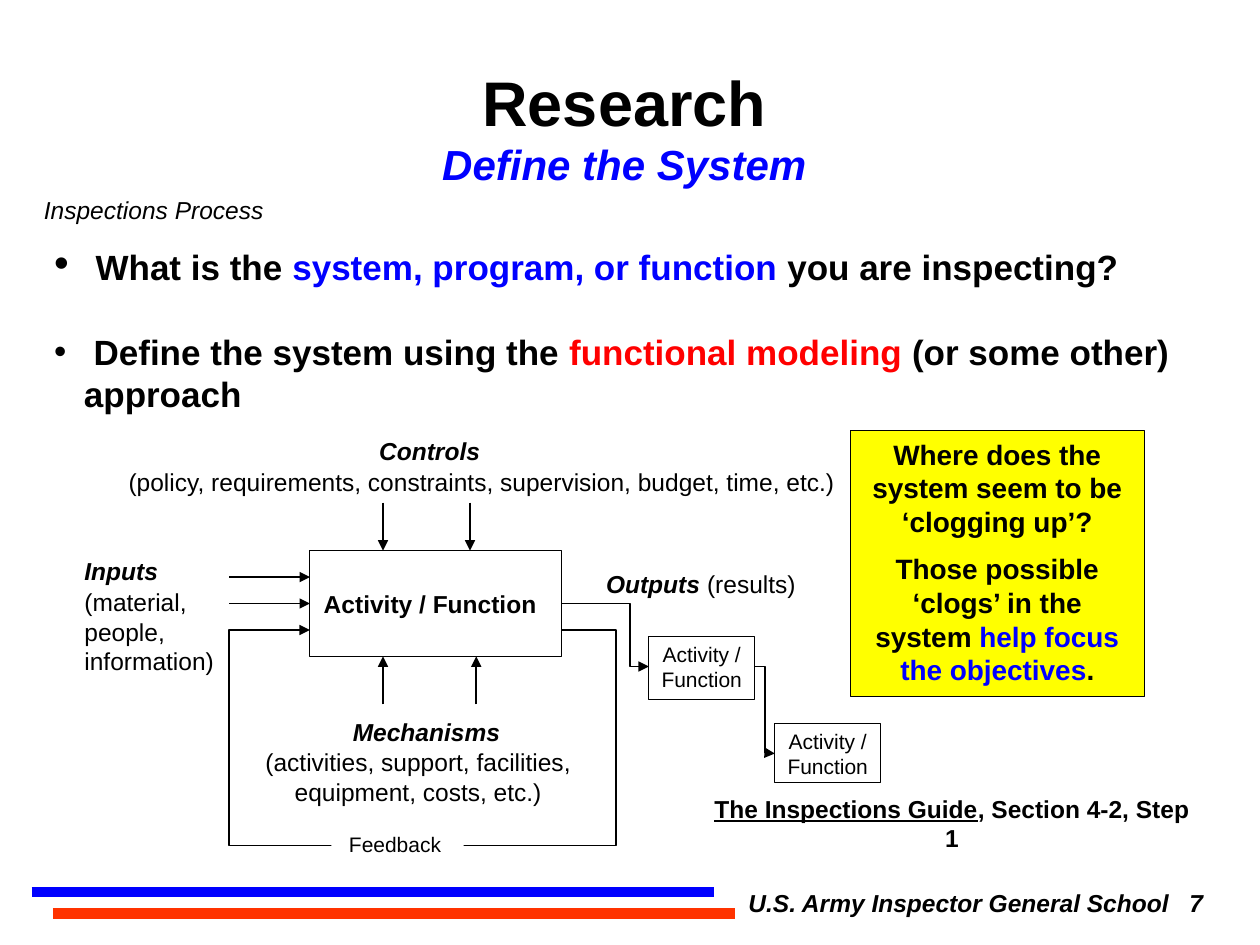
"""Builds the research slide that defines a system with a functional model."""
from lxml.etree import SubElement
from pptx import Presentation
from pptx.dml.color import RGBColor
from pptx.enum.shapes import MSO_CONNECTOR as Route, MSO_SHAPE as Preset
from pptx.enum.text import MSO_ANCHOR as Anchor, MSO_AUTO_SIZE as AutoSize, PP_ALIGN as Align
from pptx.oxml.ns import qn
from pptx.util import Inches, Pt

BLACK = RGBColor(0x00, 0x00, 0x00)
WHITE = RGBColor(0xFF, 0xFF, 0xFF)
BLUE = RGBColor(0x00, 0x00, 0xFF)
RED = RGBColor(0xFF, 0x00, 0x00)
ORANGE = RGBColor(0xFF, 0x33, 0x00)
YELLOW = RGBColor(0xFF, 0xFF, 0x00)

SLIDE_WIDTH, SLIDE_HEIGHT = Inches(10), Inches(7.5)
COLUMNS, ROWS = 100, 75
TINY_INSET = 0.4


def cells(*lengths):
    """Turn alternating columns and rows into slide lengths."""
    units = (SLIDE_WIDTH / COLUMNS, SLIDE_HEIGHT / ROWS)
    return [round(length * units[i % 2]) for i, length in enumerate(lengths)]


def write(frame, paragraphs, align=Align.LEFT, gap=0, **style):
    """Write paragraphs made of (text, style changes) pieces."""
    for index, pieces in enumerate(paragraphs):
        paragraph = frame.paragraphs[0] if index == 0 else frame.add_paragraph()
        paragraph.alignment = align
        paragraph.space_before = Pt(gap if index else 0)
        for text, changes in pieces:
            run = paragraph.add_run()
            run.text = text
            look = {"size": 14, "color": BLACK, **style, **changes}
            font = run.font
            font.name = "Arial"
            font.size = Pt(look["size"])
            font.bold = look.get("bold", False)
            font.italic = look.get("italic", False)
            font.underline = look.get("underline", False)
            font.color.rgb = look["color"]


def prepare(frame, wrap=True, inset=None, anchor=Anchor.TOP):
    """Set wrapping, anchor and an optional equal inset of a frame."""
    frame.word_wrap = wrap
    frame.auto_size = AutoSize.NONE
    frame.vertical_anchor = anchor
    if inset is not None:
        margin, = cells(inset)
        frame.margin_left = frame.margin_right = margin
        frame.margin_top = frame.margin_bottom = margin


def add_label(slide, area, pieces, wrap=True, inset=0, align=Align.LEFT, **style):
    """Add one paragraph of free-standing text."""
    frame = slide.shapes.add_textbox(*cells(*area)).text_frame
    prepare(frame, wrap, inset)
    if isinstance(pieces, str):
        pieces = [(pieces, {})]
    write(frame, [pieces], align, **style)


def add_box(slide, area, fill=None, line=BLACK):
    """Add a plain rectangle and return its text frame."""
    box = slide.shapes.add_shape(Preset.RECTANGLE, *cells(*area))
    box.shadow.inherit = False
    if fill is None:
        box.fill.background()
    else:
        box.fill.solid()
        box.fill.fore_color.rgb = fill
    if line is None:
        box.line.fill.background()
    else:
        box.line.color.rgb = line
        box.line.width = Pt(0.5)
    return box.text_frame


def finish_line(stroke, color=BLACK, width=1, arrow=True):
    """Colour a line and give it an arrowhead at its end."""
    stroke.line.color.rgb = color
    stroke.line.width = Pt(width)
    if arrow:
        outline = stroke.line._get_or_add_ln()
        SubElement(outline, qn("a:tailEnd"), type="triangle", w="med", len="med")


def add_line(slide, ends, bend=None, **look):
    """Add a straight line, or an elbow that turns at a share of its width."""
    route = Route.STRAIGHT if bend is None else Route.ELBOW
    stroke = slide.shapes.add_connector(route, *cells(*ends))
    finish_line(stroke, **look)
    properties = stroke._element.spPr
    SubElement(properties, qn("a:effectLst"))
    if bend is not None:
        guides = properties.find(qn("a:prstGeom")).get_or_add_avLst()
        SubElement(guides, qn("a:gd"), name="adj1", fmla=f"val {round(bend * 100000)}")


def add_feedback(slide):
    """Add the loop from the activity's right side back to its left."""
    start, *corners = [cells(x, y) for x, y in
                       [(44.6, 50), (48.9, 50), (48.9, 67.1), (18.2, 67.1),
                        (18.2, 50), (24.6, 50)]]
    outline = slide.shapes.build_freeform(*start)
    outline.add_line_segments(corners, close=False)
    loop = outline.convert_to_shape()
    loop.shadow.inherit = False
    loop.fill.background()
    finish_line(loop)
    add_box(slide, (26.3, 65.3, 10.5, 3.2), WHITE, None)
    add_label(slide, (27.7, 66, 7.4, 2), "Feedback", wrap=False, size=12)


def add_headings(slide):
    """Fill the title and the list of questions."""
    title, questions = slide.placeholders
    title.left, title.top, title.width, title.height = cells(34.1, 4.5, 30.9, 17)
    prepare(title.text_frame, wrap=False)
    write(title.text_frame,
          [[("Research", {"size": 36})],
           [("Define the System", {"size": 24, "color": BLUE, "italic": True})]],
          Align.CENTER, bold=True)

    questions.left, questions.top, questions.width, questions.height = cells(
        3.3, 18.4, 96.7, 18.8)
    prepare(questions.text_frame)
    write(questions.text_frame,
          [[(" ", {"size": 24}), ("What is the ", {}),
            ("system, program, or function ", {"color": BLUE}),
            ("you are inspecting?", {})],
           [(" Define the system using the ", {}),
            ("functional modeling ", {"color": RED}),
            ("(or some other) approach", {})]],
          gap=24, size=20, bold=True)
    hang, = cells(2.36)
    for paragraph in questions.text_frame.paragraphs:
        properties = paragraph._p.get_or_add_pPr()
        properties.set("marL", str(hang))
        properties.set("indent", str(-hang))


def add_model(slide):
    """Draw the activity with its inputs, controls, mechanisms and outputs."""
    activity = add_box(slide, (24.6, 43.7, 20, 8.4))
    prepare(activity, inset=1.1, anchor=Anchor.MIDDLE)
    write(activity, [[("Activity / Function", {})]], bold=True)
    for area in [(51.5, 50.5, 8.4, 5), (61.5, 57.4, 8.4, 4.7)]:
        follower = add_box(slide, area)
        prepare(follower, inset=TINY_INSET)
        write(follower, [[("Activity /", {})], [("Function", {})]], Align.CENTER, size=12)

    for text, area in [("Inputs", (6.7, 44.1, 5.9, 2.4)),
                       ("Mechanisms", (28, 56.9, 11.7, 2.4)),
                       ("Controls", (30.1, 34.6, 8, 2.4))]:
        add_label(slide, area, text, wrap=False, bold=True, italic=True)
    add_label(slide, (6.7, 46.6, 10.9, 7.1), "(material, people, information)")
    add_label(slide, (19.1, 59.3, 28.2, 4.7),
              "(activities, support, facilities, equipment, costs, etc.)", align=Align.CENTER)
    add_label(slide, (10.2, 37.1, 58.5, 2.4),
              "(policy, requirements, constraints, supervision, budget, time, etc.)")
    add_label(slide, (48.1, 45.2, 18.5, 2.4),
              [("Outputs ", {"bold": True, "italic": True}), ("(results)", {})])

    arrows = [(18.2, y, 24.6, y) for y in (45.8, 47.9)]
    arrows += [(x, 39.9, x, 43.7) for x in (30.4, 37.3)]
    arrows += [(x, 55.9, x, 52.1) for x in (30.4, 37.8)]
    for ends in arrows:
        add_line(slide, ends)
    add_line(slide, (44.6, 47.9, 51.5, 52.9), bend=0.78)
    add_line(slide, (59.9, 52.9, 61.5, 59.8), bend=0.52)
    add_feedback(slide)


def add_clog_note(slide):
    """Add the yellow note about clogs in the system."""
    note = add_box(slide, (67.5, 34.2, 23.3, 21.1), YELLOW)
    prepare(note)
    write(note,
          [[("Where does the system seem to be ‘clogging up’?", {})],
           [("Those possible ‘clogs’ in the system ", {}),
            ("help focus the objectives", {"color": BLUE}), (".", {})]],
          Align.CENTER, gap=8, size=16, bold=True)


def add_surroundings(slide):
    """Add the section name, the reference and the footer."""
    add_line(slide, (2.5, 70.8, 56.7, 70.8), color=BLUE, width=6, arrow=False)
    add_line(slide, (4.2, 72.5, 58.3, 72.5), color=ORANGE, width=6, arrow=False)
    add_label(slide, (2.5, 15, 45, 5), "Inspections Process", inset=None, italic=True)
    add_label(slide, (55, 62.5, 41.1, 3.3),
              [("The Inspections Guide", {"underline": True}), (", Section 4-2, Step 1", {})],
              inset=None, align=Align.CENTER, bold=True)
    for text, area in [("U.S. Army Inspector General School", (59.4, 70.5, 34, 3)),
                       ("7", (94.4, 70.5, 2, 3))]:
        add_label(slide, area, text, wrap=False, bold=True, italic=True)


def main():
    """Build and save the slide."""
    deck = Presentation()
    deck.slide_width, deck.slide_height = SLIDE_WIDTH, SLIDE_HEIGHT
    slide = deck.slides.add_slide(deck.slide_layouts[1])
    add_surroundings(slide)
    add_headings(slide)
    add_model(slide)
    add_clog_note(slide)
    deck.save("out.pptx")


if __name__ == "__main__":
    main()
